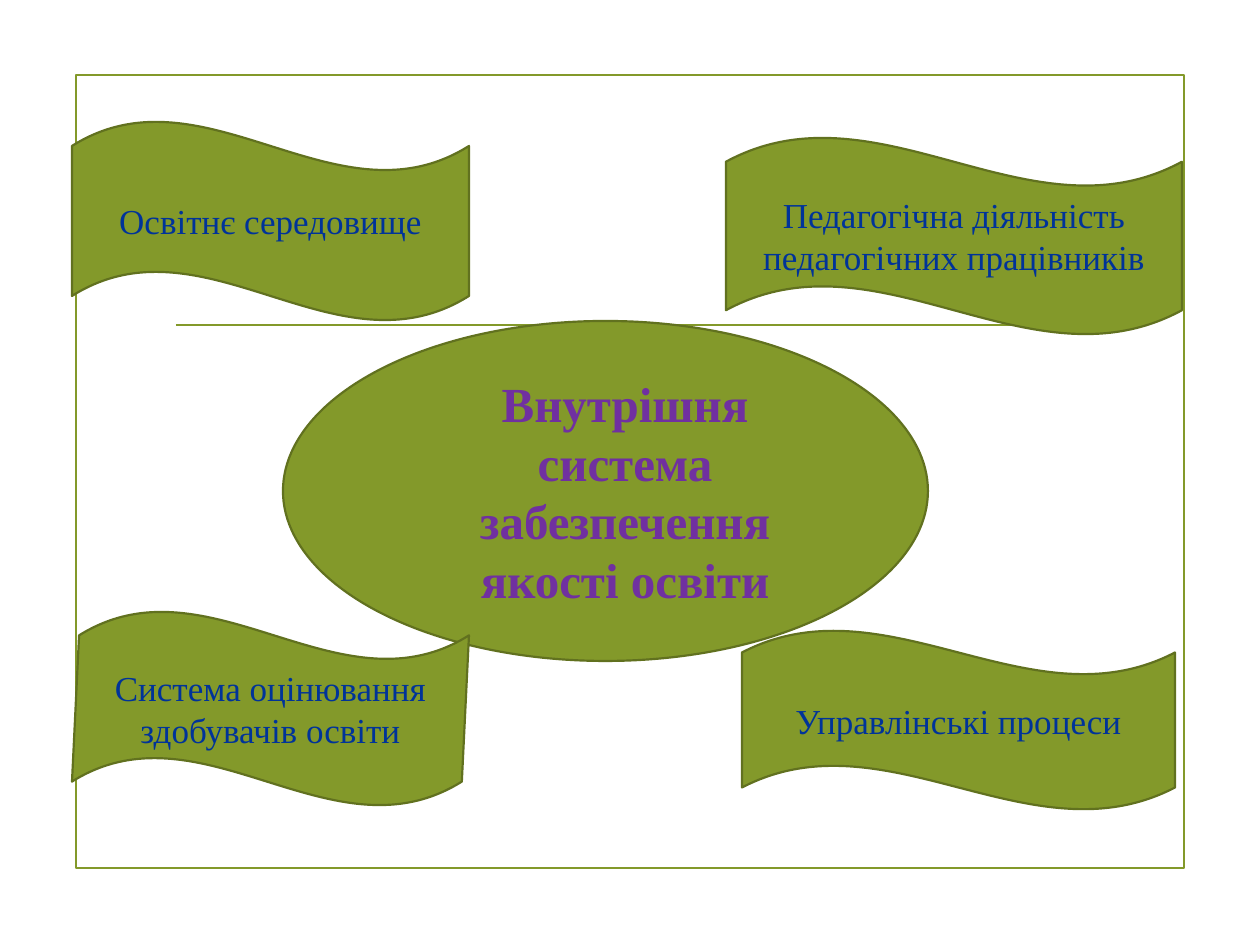
import pptx
import pptx.dml.color
import pptx.enum.shapes
import pptx.enum.text
import pptx.oxml.ns
import pptx.util

PX = 914400 // 126
SHAPES = pptx.enum.shapes.MSO_SHAPE
GREEN, DARK_GREEN, BLUE, PURPLE = "83992A", "61711F", "003399", "7030A0"

FRAME = (76, 75, 1108, 793)
DIVIDER = (176, 325, 1085, 325)
CENTRE = ("Внутрішня система забезпечення якості освіти", (283, 321, 645, 340))
CENTRE_INDENT = 39
# text, (left, top, width, height), sideways slant of the wave
WAVES = [
    ("Педагогічна діяльність педагогічних працівників", (726, 137, 456, 198), 0),
    ("Управлінські процеси", (742, 630, 433, 180), 0),
    ("Освітнє середовище", (72, 121, 397, 200), 0),
    ("Система оцінювання здобувачів освіти", (72, 611, 397, 195), -0.009),
]


def colour(value):
    return pptx.dml.color.RGBColor.from_string(value)


def scaled(lengths):
    return [length * PX for length in lengths]


def set_line(item, value):
    item.line.color.rgb = colour(value)
    item.line.width = pptx.util.Pt(1.25)


def add_outlined_shape(slide, kind, box, line):
    shape = slide.shapes.add_shape(kind, *scaled(box))
    shape.shadow.inherit = False
    set_line(shape, line)
    return shape


def add_label(slide, kind, text, box, size, text_colour, bold=False):
    shape = add_outlined_shape(slide, kind, box, DARK_GREEN)
    shape.fill.solid()
    shape.fill.fore_color.rgb = colour(GREEN)
    frame = shape.text_frame
    frame.text = text
    frame.word_wrap = True
    frame.vertical_anchor = pptx.enum.text.MSO_ANCHOR.MIDDLE
    paragraph = frame.paragraphs[0]
    paragraph.alignment = pptx.enum.text.PP_ALIGN.CENTER
    font = paragraph.runs[0].font
    font.name = "Times New Roman"
    font.size = pptx.util.Pt(size)
    font.bold = bold
    font.color.rgb = colour(text_colour)
    return shape


def main():
    presentation = pptx.Presentation()
    presentation.slide_width = pptx.util.Inches(10)
    presentation.slide_height = pptx.util.Inches(7.5)
    slide = presentation.slides.add_slide(presentation.slide_layouts[6])

    add_outlined_shape(slide, SHAPES.RECTANGLE, FRAME, GREEN).fill.background()
    divider = slide.shapes.add_connector(
        pptx.enum.shapes.MSO_CONNECTOR.STRAIGHT, *scaled(DIVIDER))
    set_line(divider, GREEN)
    properties = divider.element.find(pptx.oxml.ns.qn("p:spPr"))
    properties.append(pptx.oxml.parse_xml(
        f"<a:effectLst {pptx.oxml.ns.nsdecls('a')}/>"))

    centre = add_label(slide, SHAPES.OVAL, *CENTRE, 28, PURPLE, bold=True)
    centre.text_frame.margin_left += CENTRE_INDENT * PX

    for text, box, slant in WAVES:
        wave = add_label(slide, SHAPES.WAVE, text, box, 20, BLUE)
        wave.adjustments[1] = slant

    presentation.save("out.pptx")


if __name__ == "__main__":
    main()
